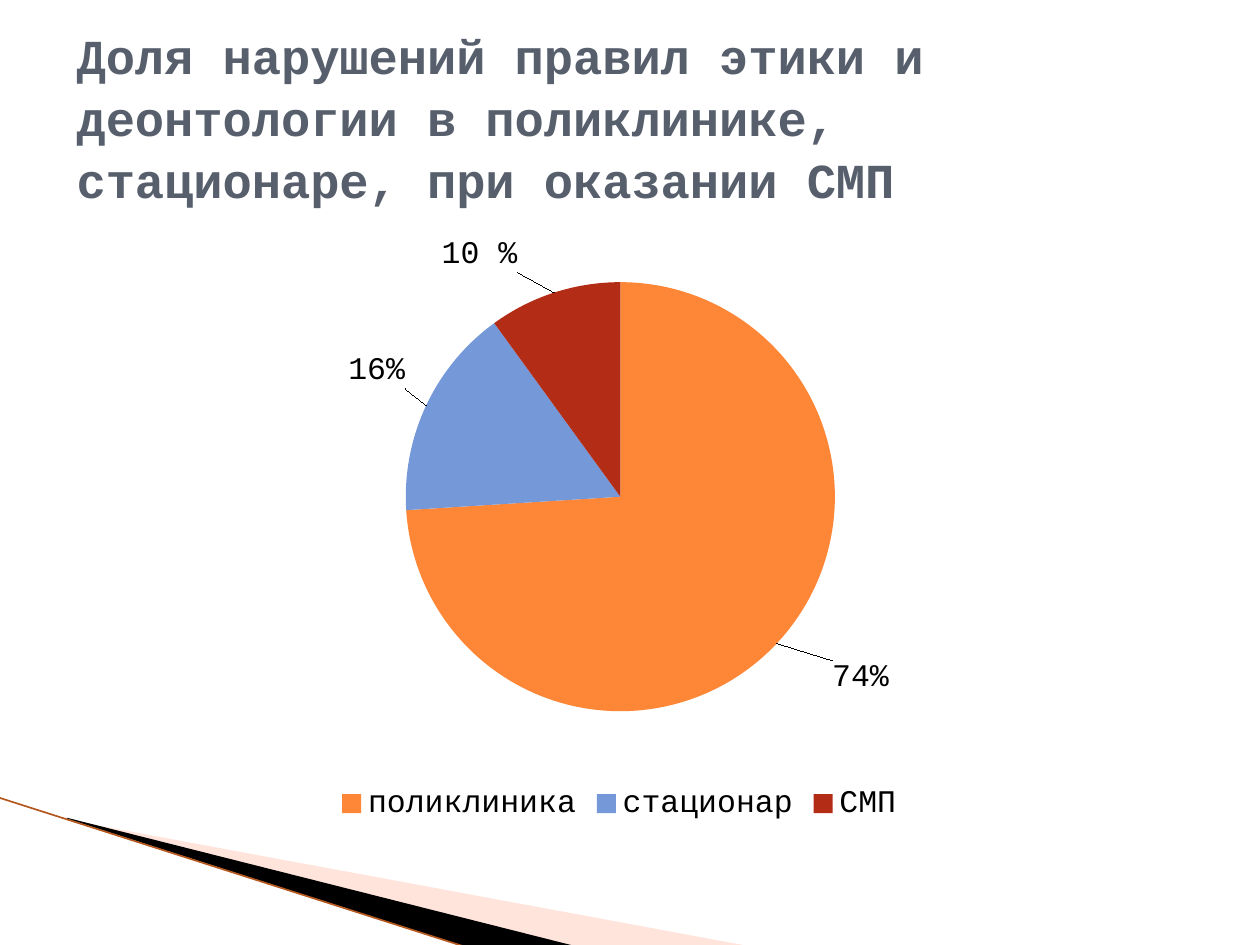
import pptx
import pptx.chart.data
import pptx.dml.color
import pptx.enum.chart
import pptx.enum.shapes
import pptx.enum.text
import pptx.oxml.ns
import pptx.oxml.xmlchemy
import pptx.util

RGBColor = pptx.dml.color.RGBColor
SLATE = RGBColor(0x57, 0x5F, 0x6D)
BLACK = RGBColor(0x00, 0x00, 0x00)
PEACH = RGBColor(0xFF, 0xBC, 0xA5)
RUST = RGBColor(0xB4, 0x58, 0x1E)
ORANGE = RGBColor(0xFE, 0x86, 0x37)
BLUE = RGBColor(0x75, 0x98, 0xD9)
RED = RGBColor(0xB3, 0x2C, 0x16)

FONT = "Courier New"
WIDTH = pptx.util.Inches(10)
HEIGHT = pptx.util.Inches(7.5)

SHARES = [
    ("поликлиника", 74, "74%", ORANGE, (4.5, 2)),
    ("стационар", 16, "16%", BLUE, (-1.3, -2.2)),
    ("СМП", 10, "10 %", RED, (-3.1, -2.2)),
]


def place(across, down):
    return round(WIDTH * across / 100), round(HEIGHT * down / 100)


def add_child(parent, tag, **attributes):
    child = pptx.oxml.xmlchemy.OxmlElement(tag)
    for name, value in attributes.items():
        child.set(name, str(value))
    parent.append(child)
    return child


def make_layout(**percents):
    layout = pptx.oxml.xmlchemy.OxmlElement("c:layout")
    manual = add_child(layout, "c:manualLayout")
    if "w" in percents:
        for tag, value in (("layoutTarget", "inner"), ("xMode", "edge"), ("yMode", "edge")):
            add_child(manual, f"c:{tag}", val=value)
    for name, percent in percents.items():
        add_child(manual, f"c:{name}", val=round(percent / 100, 4))
    return layout


def add_wedge(page, points, color, opacity=100):
    corners = [place(*point) for point in points]
    builder = page.shapes.build_freeform(*corners[0])
    builder.add_line_segments(corners[1:], close=True)
    wedge = builder.convert_to_shape()
    wedge.shadow.inherit = False
    wedge.line.fill.background()
    wedge.fill.solid()
    wedge.fill.fore_color.rgb = color
    if opacity < 100:
        tint = wedge._element.spPr.find(".//" + pptx.oxml.ns.qn("a:srgbClr"))
        add_child(tint, "a:alpha", val=opacity * 1000)


def add_edge_line(page, start, end):
    line = page.shapes.add_connector(
        pptx.enum.shapes.MSO_CONNECTOR.STRAIGHT, *place(*start), *place(*end))
    line.line.color.rgb = RUST
    line.line.width = pptx.util.Pt(0.95)
    add_child(line._element.spPr, "a:effectLst")


def add_title(page, text):
    box = page.shapes.add_textbox(*place(5.1, 3.87), *place(90, 16.67))
    frame = box.text_frame
    frame.word_wrap = True
    frame.vertical_anchor = pptx.enum.text.MSO_ANCHOR.MIDDLE
    para = frame.paragraphs[0]
    para.line_spacing = 1.06
    span = para.add_run()
    span.text = text
    span.font.name = FONT
    span.font.size = pptx.util.Pt(27.9)
    span.font.bold = True
    span.font.color.rgb = SLATE


def style_font(font):
    font.name = FONT
    font.size = pptx.util.Pt(18)
    font.color.rgb = BLACK


def style_slice(point, text, color, offset):
    point.format.fill.solid()
    point.format.fill.fore_color.rgb = color
    point.format.line.fill.background()
    label = point.data_label
    span = label.text_frame.paragraphs[0].add_run()
    span.text = text
    style_font(span.font)
    label.position = pptx.enum.chart.XL_LABEL_POSITION.OUTSIDE_END
    index = label._dLbl.find(pptx.oxml.ns.qn("c:idx"))
    index.addnext(make_layout(x=offset[0], y=offset[1]))


def add_pie(page):
    data = pptx.chart.data.CategoryChartData()
    data.categories = [share[0] for share in SHARES]
    data.add_series("Series 1", [share[1] for share in SHARES])
    chart = page.shapes.add_chart(
        pptx.enum.chart.XL_CHART_TYPE.PIE,
        *place(5, 23.73), *place(88.3, 63.87), data).chart
    chart.has_title = False
    style_font(chart.font)
    chart.has_legend = True
    chart.legend.position = pptx.enum.chart.XL_LEGEND_POSITION.BOTTOM
    chart.legend.include_in_layout = False
    style_font(chart.legend.font)

    area = chart._chartSpace.find(".//" + pptx.oxml.ns.qn("c:plotArea"))
    for layout in area.findall(pptx.oxml.ns.qn("c:layout")):
        area.remove(layout)
    area.insert(0, make_layout(x=8.1, y=9.6, w=84, h=71.1))

    series = chart.plots[0].series[0]
    series.data_labels.show_value = True
    for number, (_, _, text, color, offset) in enumerate(SHARES):
        style_slice(series.points[number], text, color, offset)


def main():
    deck = pptx.Presentation()
    deck.slide_width, deck.slide_height = WIDTH, HEIGHT
    page = deck.slides.add_slide(deck.slide_layouts[6])
    add_wedge(page, [(5.5, 86.8), (59.5, 100.13), (45.6, 100.13), (5.5, 86.67)], PEACH, 40)
    add_wedge(page, [(5.3, 86.53), (45.7, 100.13), (37.2, 100.27), (5.4, 86.67)], BLACK)
    add_edge_line(page, (-0.1, 84.4), (37.1, 100.27))
    add_pie(page)
    add_title(page, "Доля нарушений правил этики и деонтологии в поликлинике, "
                    "стационаре, при оказании СМП")
    deck.save("out.pptx")


if __name__ == "__main__":
    main()
